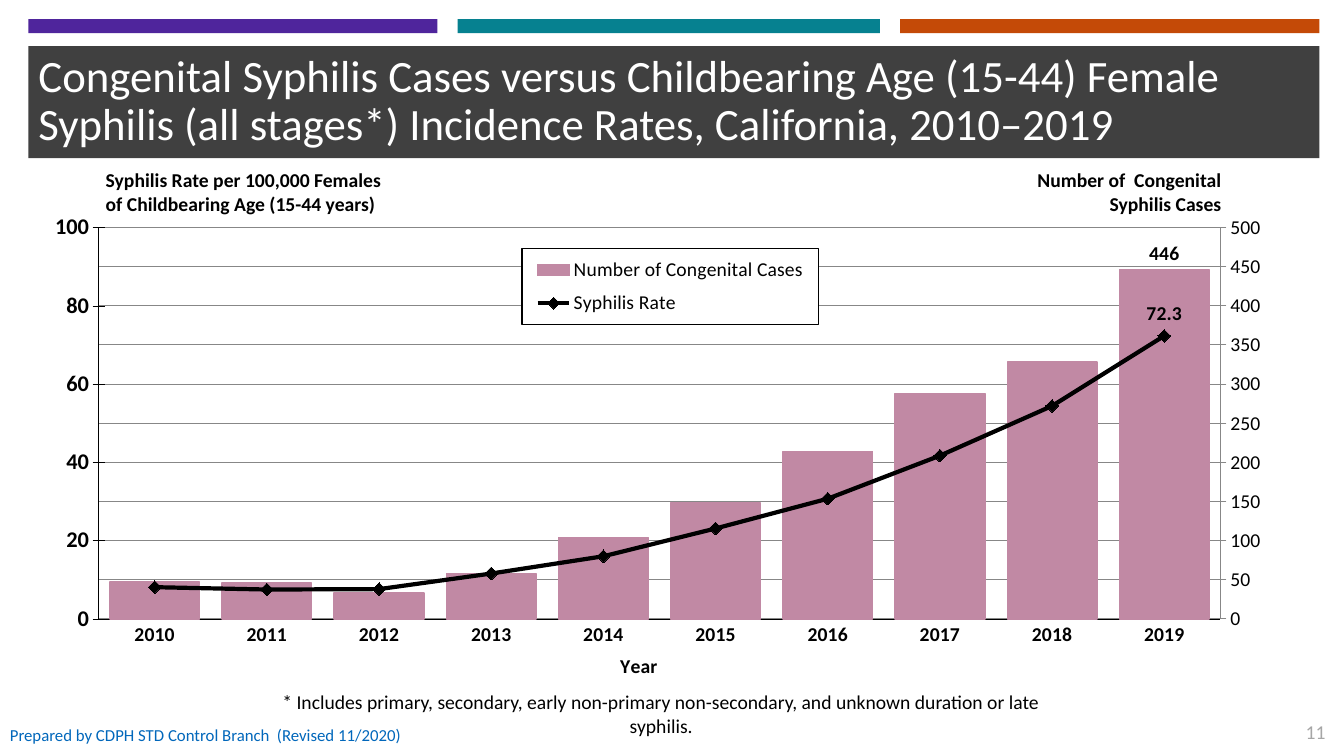
import copy

import lxml.etree
import pptx
import pptx.chart.axis
import pptx.chart.data
import pptx.dml.color
import pptx.enum.chart
import pptx.enum.dml
import pptx.enum.shapes
import pptx.enum.text
import pptx.oxml
import pptx.oxml.ns
import pptx.util

Pt = pptx.util.Pt
qn = pptx.oxml.ns.qn
RGB = pptx.dml.color.RGBColor.from_string
Align = pptx.enum.text.PP_ALIGN
Anchor = pptx.enum.text.MSO_ANCHOR
Tick = pptx.enum.chart.XL_TICK_MARK
LabelSpot = pptx.enum.chart.XL_LABEL_POSITION

# Content
TITLE = ("Congenital Syphilis Cases versus Childbearing Age (15-44) Female "
         "Syphilis (all stages*) Incidence Rates, California, 2010–2019")
AXIS_HEADINGS = ["Syphilis Rate per 100,000 Females\tNumber of  Congenital",
                 "of Childbearing Age (15-44 years)\tSyphilis Cases"]
YEARS = [str(year) for year in range(2010, 2020)]
CASES = ("Number of Congenital Cases", [47, 46, 33, 58, 104, 148, 214, 288, 328, 446])
RATE = ("Syphilis Rate", [8.1, 7.5, 7.6, 11.6, 16, 23.1, 30.7, 41.7, 54.4, 72.3])
FOOTNOTE = ("* Includes primary, secondary, early non-primary non-secondary, "
            "and unknown duration or late syphilis.")
CREDIT, REVISION, PAGE = "Prepared by CDPH STD Control Branch", "(Revised 11/2020)", "11"

# Theme
THEME = {
    "font": "Calibri", "ink": "000000", "paper": "FFFFFF", "band": "404040",
    "credit": "0167BB", "page": "A6A6A6", "bar": "C189A4", "grid": "C0C0C0",
    "title": 32, "axis": 16, "body": 14, "small": 12,
}

# Places in points: left, top, width, height
BAND = (20.2, 33, 922.3, 80)
STRIPES = [("4F259C", 20.2, 292.3), ("068190", 326.9, 301.7), ("C44A07", 643, 299.5)]
STRIPE_TOP, STRIPE_HEIGHT = 13.7, 10
CHART = (20.2, 124.6, 913.7, 364.3)
# Places inside the chart, as fractions of it
PLOT = {"x": 0.055, "y": 0.104, "w": 0.877, "h": 0.768}
LEGEND = {"x": 0.386, "y": 0.146, "w": 0.232, "h": 0.148}
YEAR_TITLE = {"x": 0.46, "y": 0.93}


def points(place):
    return [Pt(length) for length in place]


def set_font(font, size, color="ink", bold=False):
    values = {"name": THEME["font"], "size": Pt(THEME[size]), "bold": bold}
    for key, value in values.items():
        setattr(font, key, value)
    font.color.rgb = RGB(THEME[color])


def set_line(line, color, width):
    line.color.rgb = RGB(THEME[color])
    line.width = Pt(width)


def add_bar(slide, color, place):
    bar = slide.shapes.add_shape(pptx.enum.shapes.MSO_SHAPE.RECTANGLE, *points(place))
    bar.shadow.inherit = False
    bar.fill.solid()
    bar.fill.fore_color.rgb = RGB(color)
    bar.line.fill.background()


def add_text(slide, lines, place, size, color="ink", bold=False,
             align=Align.LEFT, anchor=Anchor.TOP):
    frame = slide.shapes.add_textbox(*points(place)).text_frame
    for key, value in {"word_wrap": True, "vertical_anchor": anchor}.items():
        setattr(frame, key, value)
    frame.text = "\n".join(lines)
    for paragraph in frame.paragraphs:
        paragraph.alignment = align
        set_font(paragraph.runs[0].font, size, color, bold)
    return frame


def place_inside(element, box, inner=False):
    """Give a chart part a manual layout."""
    for old in element.findall(qn("c:layout")):
        element.remove(old)
    layout = pptx.oxml.parse_xml(
        '<c:layout xmlns:c="http://schemas.openxmlformats.org/drawingml/2006/chart">'
        "<c:manualLayout/></c:layout>")
    settings = {"layoutTarget": "inner"} if inner else {}
    settings.update(xMode="edge", yMode="edge", **box)
    for key, value in settings.items():
        lxml.etree.SubElement(layout[0], qn("c:" + key)).set("val", str(value))
    before = [child for child in element
              if child.tag in (qn("c:tx"), qn("c:legendPos"))]
    element.insert(element.index(before[-1]) + 1 if before else 0, layout)


def move_rate_to_line(chart):
    """Move the second series to a line plot with its own axes."""
    plot_area = chart.plots[0]._element.getparent()
    bars = plot_area.find(qn("c:barChart"))
    rate = bars.findall(qn("c:ser"))[1]
    for bar_only in rate.findall(qn("c:invertIfNegative")):
        rate.remove(bar_only)
    line = pptx.oxml.parse_xml(
        '<c:lineChart xmlns:c="http://schemas.openxmlformats.org/drawingml/2006/chart"/>')
    bars.addnext(line)
    for key, value in (("grouping", "standard"), ("varyColors", "0")):
        lxml.etree.SubElement(line, qn("c:" + key)).set("val", value)
    line.append(rate)
    lxml.etree.SubElement(line, qn("c:marker")).set("val", "1")
    years, cases = plot_area.find(qn("c:catAx")), plot_area.find(qn("c:valAx"))
    line_years, rates = copy.deepcopy(years), copy.deepcopy(cases)
    cases.addnext(rates)
    rates.addnext(line_years)
    for axis, own, other in ((line_years, "5001", "5002"), (rates, "5002", "5001")):
        axis.find(qn("c:axId")).set("val", own)
        axis.find(qn("c:crossAx")).set("val", other)
        lxml.etree.SubElement(line, qn("c:axId")).set("val", own)
    line_years.find(qn("c:delete")).set("val", "1")
    for axis, side, crossing in ((cases, "r", "max"), (rates, "l", "autoZero")):
        axis.find(qn("c:axPos")).set("val", side)
        axis.find(qn("c:crosses")).set("val", crossing)
    place_inside(plot_area, PLOT, inner=True)
    return pptx.chart.axis.ValueAxis(rates)


def label_last(series, position):
    label = series.points[len(YEARS) - 1].data_label
    set_font(label.font, "body", bold=True)
    label.position = position


def format_axis(axis, size, tick, **values):
    values.update(major_tick_mark=tick, minor_tick_mark=Tick.NONE)
    for key, value in values.items():
        setattr(axis, key, value)
    set_font(axis.tick_labels.font, size, bold=True)
    set_line(axis.format.line, "ink", 0.25)


def add_syphilis_chart(slide):
    data = pptx.chart.data.CategoryChartData()
    data.categories = YEARS
    for name, values in (CASES, RATE):
        data.add_series(name, values)
    chart = slide.shapes.add_chart(pptx.enum.chart.XL_CHART_TYPE.COLUMN_CLUSTERED,
                                   *points(CHART), data).chart
    set_font(chart.font, "body")
    chart.has_title = False
    rates = move_rate_to_line(chart)

    # Axes
    format_axis(chart.value_axis, "axis", Tick.CROSS, minimum_scale=0,
                maximum_scale=500, major_unit=100, has_major_gridlines=True)
    format_axis(rates, "axis", Tick.CROSS, minimum_scale=0,
                maximum_scale=100, major_unit=20, has_major_gridlines=False)
    format_axis(chart.category_axis, "body", Tick.NONE)
    grid = chart.value_axis.major_gridlines.format.line
    set_line(grid, "grid", 1.06)
    grid.dash_style = pptx.enum.dml.MSO_LINE.SQUARE_DOT
    year_title = chart.category_axis.axis_title
    year_title.text_frame.text = "Year"
    set_font(year_title.text_frame.paragraphs[0].runs[0].font, "body", bold=True)
    place_inside(year_title._element, YEAR_TITLE)

    # Series
    bars, line = chart.plots
    bars.gap_width, bars.vary_by_categories = 25, False
    cases, rate = bars.series[0], line.series[0]
    rate.smooth = False
    rate.marker.style, rate.marker.size = pptx.enum.chart.XL_MARKER_STYLE.DIAMOND, 9
    for part, color in ((cases, "bar"), (rate.marker, "ink")):
        part.format.fill.solid()
        part.format.fill.fore_color.rgb = RGB(THEME[color])
        set_line(part.format.line, color, 1.06)
    set_line(rate.format.line, "ink", 3)
    label_last(cases, LabelSpot.OUTSIDE_END)
    label_last(rate, LabelSpot.ABOVE)

    # Legend
    chart.has_legend = True
    chart.legend.include_in_layout = False
    set_font(chart.legend.font, "body")
    place_inside(chart.legend._element, LEGEND)
    box = pptx.oxml.parse_xml(
        '<c:spPr xmlns:c="http://schemas.openxmlformats.org/drawingml/2006/chart" '
        'xmlns:a="http://schemas.openxmlformats.org/drawingml/2006/main">'
        f'<a:solidFill><a:srgbClr val="{THEME["paper"]}"/></a:solidFill>'
        f'<a:ln w="9525"><a:solidFill><a:srgbClr val="{THEME["ink"]}"/></a:solidFill></a:ln>'
        "</c:spPr>")
    chart.legend._element.find(qn("c:txPr")).addprevious(box)


def main():
    deck = pptx.Presentation()
    deck.slide_width, deck.slide_height = Pt(960), Pt(540)
    slide = deck.slides.add_slide(deck.slide_layouts[5])

    # Title on its band, with the stripes above
    title = slide.shapes.title
    for key, value in zip(("left", "top", "width", "height"), points(BAND)):
        setattr(title, key, value)
    title.fill.solid()
    title.fill.fore_color.rgb = RGB(THEME["band"])
    title.text_frame.text = TITLE
    title.text_frame.vertical_anchor = Anchor.MIDDLE
    heading = title.text_frame.paragraphs[0]
    heading.alignment, heading.line_spacing = Align.LEFT, 0.9
    set_font(heading.runs[0].font, "title", "paper")
    for color, left, width in STRIPES:
        add_bar(slide, color, (left, STRIPE_TOP, width, STRIPE_HEIGHT))

    # Chart with the headings of both value axes
    headings = add_text(slide, AXIS_HEADINGS, (68.4, 116.6, 843.8, 41), "body", bold=True)
    for paragraph in headings.paragraphs:
        tabs = lxml.etree.SubElement(paragraph._p.get_or_add_pPr(), qn("a:tabLst"))
        lxml.etree.SubElement(tabs, qn("a:tab"), pos=str(Pt(797)), algn="r")
    add_syphilis_chart(slide)

    # Footer
    add_text(slide, [FOOTNOTE], (175.7, 489.6, 593.3, 24.5), "body", align=Align.CENTER)
    for words, left, width in ((CREDIT, 0, 201.6), (REVISION, 190.8, 108)):
        add_text(slide, [words], (left, 510.5, width, 28.8), "small", "credit",
                 anchor=Anchor.MIDDLE)
    add_text(slide, [PAGE], (923, 510.5, 31, 24.5), "body", "page", align=Align.RIGHT)
    deck.save("out.pptx")


if __name__ == "__main__":
    main()
